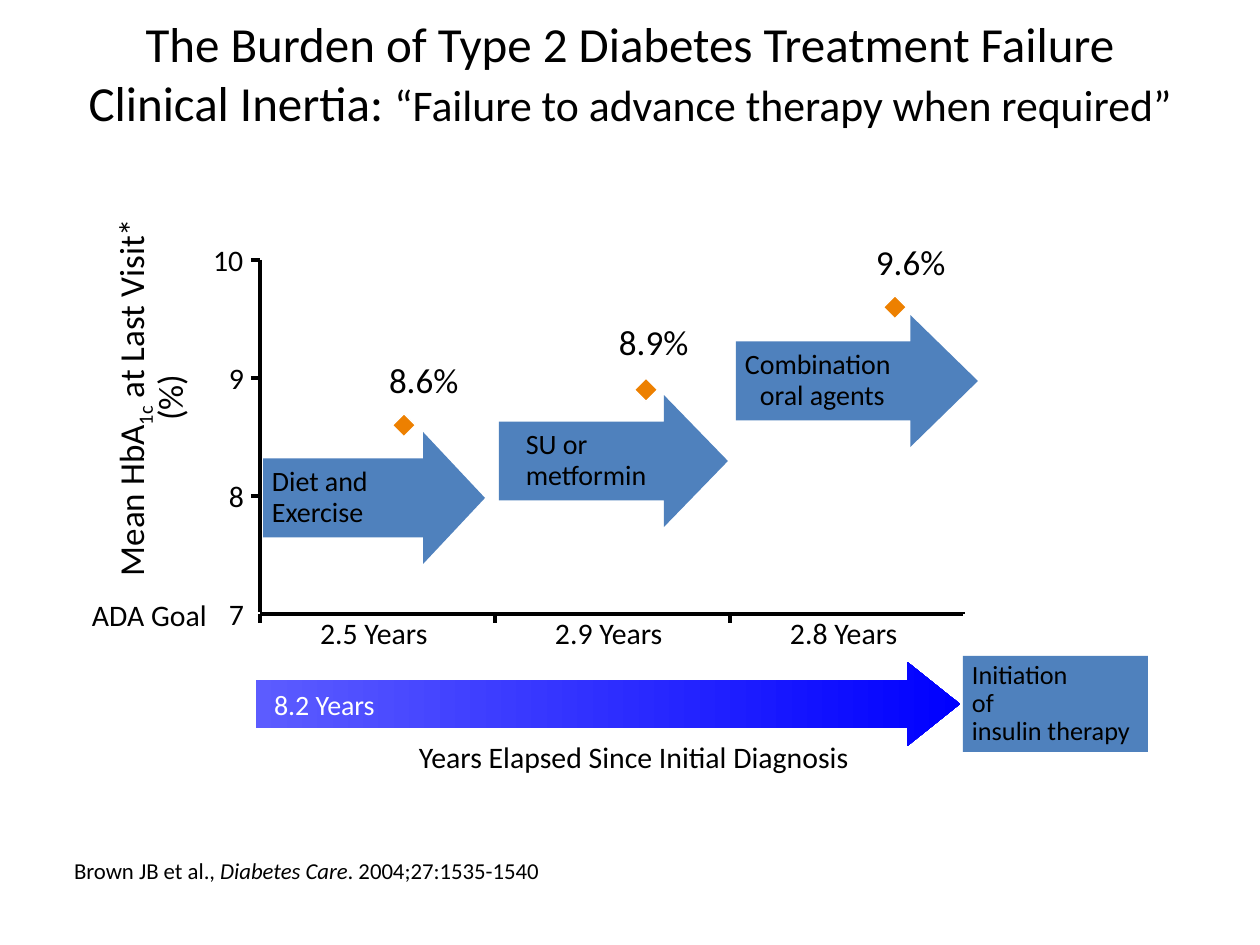
from pptx import Presentation, util as u
from pptx.dml.color import RGBColor
from pptx.enum import shapes, text
from pptx.oxml.ns import qn
from lxml import etree

PX = 914400 // 126
BLACK, WHITE, BLUE, ORANGE = "000000", "FFFFFF", "4F81BD", "ED8000"
LEFT, CENTER = text.PP_ALIGN.LEFT, text.PP_ALIGN.CENTER
TOP, MIDDLE, BOTTOM = text.MSO_ANCHOR.TOP, text.MSO_ANCHOR.MIDDLE, text.MSO_ANCHOR.BOTTOM
KIND = shapes.MSO_SHAPE

# Content: each paragraph is a list of (text, size, style) runs
TITLE = [[("The Burden of Type 2 Diabetes Treatment Failure", 28, "")],
         [("Clinical Inertia: ", 28, ""),
          ("“Failure to advance therapy when required”", 25, "")]]
MEASURE = [[("Mean HbA", 20, ""), ("1c", 20, "sub"), (" at Last Visit* (%)", 20, "")]]
SOURCE = [[("Brown JB et al., ", 13, ""), ("Diabetes Care", 13, "italic"),
           (". 2004;27:1535-1540", 13, "")]]
# Steps: text, box, head ratio, left inset
STEPS = [("Diet and\nExercise", (263, 432, 222, 132), 0.469, 9),
         ("SU or\nmetformin", (499, 395, 229, 132), 0.485, 27),
         ("Combination\noral agents", (736, 315, 242, 132), 0.512, 9)]
# Readings: value, marker centre x, label left and top
READS = [(8.6, 404, 389, 362), (8.9, 646, 619, 324), (9.6, 895, 876, 244)]
YEARS = ["2.5 Years", "2.9 Years", "2.8 Years"]

# Axis geometry
X0, Y0, WIDE, UNIT, TICK = 260, 614, 235, 118, 9
LOW, HIGH = 7, 10


def rgb(code):
    return RGBColor.from_string(code)


def emu(*nums):
    return [round(n * PX) for n in nums]


def level(value):
    return Y0 - (value - LOW) * UNIT


def plain(words, size):
    return [[(line, size, "")] for line in words.split("\n")]


def write(shape, paras, color=BLACK, align=LEFT, anchor=TOP, pads=(0, 0, 0, 0),
          wrap=False, space=0.9):
    frame = shape.text_frame
    frame.word_wrap, frame.vertical_anchor = wrap, anchor
    (frame.margin_left, frame.margin_top,
     frame.margin_right, frame.margin_bottom) = emu(*pads)
    for i, runs in enumerate(paras):
        para = frame.add_paragraph() if i else frame.paragraphs[0]
        para.alignment, para.line_spacing = align, space
        for words, size, style in runs:
            run = para.add_run()
            run.text = words
            font = run.font
            font.name, font.size, font.color.rgb = "Calibri", u.Pt(size), rgb(color)
            if style == "italic":
                font.italic = True
            elif style == "sub":
                font._element.set("baseline", "-25000")


def label(box, paras, **opts):
    shape = slide.shapes.add_textbox(*emu(*box))
    write(shape, paras, **opts)
    if not shape.text_frame.word_wrap:
        shape.text_frame.auto_size = text.MSO_AUTO_SIZE.SHAPE_TO_FIT_TEXT
    return shape


def block(kind, box, fill=None, adjust=()):
    shape = slide.shapes.add_shape(kind, *emu(*box))
    shape.shadow.inherit = False
    shape.line.fill.background()
    if fill:
        shape.fill.solid()
        shape.fill.fore_color.rgb = rgb(fill)
    for i, ratio in enumerate(adjust):
        shape.adjustments[i] = ratio
    return shape


def rule(x1, y1, x2, y2, color=BLACK):
    line = slide.shapes.add_connector(shapes.MSO_CONNECTOR.STRAIGHT, *emu(x1, y1, x2, y2))
    line.line.color.rgb, line.line.width = rgb(color), u.Pt(2.25)
    etree.SubElement(line._element.spPr, qn("a:effectLst"))


deck = Presentation()
deck.slide_width, deck.slide_height = emu(1260, 945)
slide = deck.slides.add_slide(deck.slide_layouts[6])

# Title and axis titles
label((0, 0, 1260, 145), TITLE, align=CENTER, anchor=MIDDLE, pads=(13, 6, 13, 6),
      wrap=True, space=1.0)
side = label((-44, 359, 392, 77), MEASURE, align=CENTER, anchor=BOTTOM, wrap=True)
side.rotation = 270
label((92, 601, 116, 33), plain("ADA Goal", 17))
label((418, 743, 432, 33), plain("Years Elapsed Since Initial Diagnosis", 17), align=CENTER)

# Total time arrow and its end point
total = block(KIND.RIGHT_ARROW, (256, 662, 704, 84), adjust=(0.57, 0.627))
total.fill.gradient()
total.fill.gradient_angle = 0
for stop, code, place in zip(total.fill.gradient_stops, ("5C5CFF", "0000FF"), (0, 1)):
    stop.color.rgb, stop.position = rgb(code), place
write(total, plain("8.2 Years", 16), WHITE, anchor=MIDDLE, pads=(18, 9, 18, 9), space=1.0)
goal = block(KIND.RECTANGLE, (963, 656, 185, 96), BLUE)
write(goal, plain("Initiation\nof\ninsulin therapy", 15), anchor=MIDDLE, pads=(9, 4, 18, 4))

# Treatment steps
for words, box, head, pad in STEPS:
    step = block(KIND.RIGHT_ARROW, box, BLUE, (0.598, head))
    write(step, plain(words, 16), anchor=MIDDLE, pads=(pad, 4, 18, 4))
# Second line of the last step is indented
step.text_frame.paragraphs[1]._p.get_or_add_pPr().set("marL", str(15 * PX))

# Axes with ticks and labels
rule(X0, level(HIGH), X0, Y0)
for value in range(LOW, HIGH + 1):
    y = level(value)
    rule(X0 - TICK, y, X0, y, WHITE if value == LOW else BLACK)
    wide = 16 * len(str(value))
    label((245 - wide, y - 16, wide, 34), plain(str(value), 17), space=0.95)
rule(X0, Y0, X0 + WIDE * len(YEARS), Y0)
for i in range(len(YEARS) + 1):
    x = X0 + WIDE * i
    rule(x, Y0 + TICK, x, Y0, WHITE if i == len(YEARS) else BLACK)
for i, words in enumerate(YEARS):
    label((X0 + 60 + WIDE * i, 617, 110, 34), plain(words, 17), space=0.95)

# Readings
for value, x, left, top in READS:
    mark = block(KIND.DIAMOND, (x - 11.5, level(value) - 11.5, 23, 23), ORANGE)
    mark.line.color.rgb, mark.line.width = rgb(WHITE), u.Pt(0.75)
    label((left, top, 72, 40), plain(f"{value}%", 20), space=0.95)

# Citation
label((74, 808, 577, 76), SOURCE, anchor=BOTTOM, wrap=True, space=u.Pt(43))

deck.save("out.pptx")
